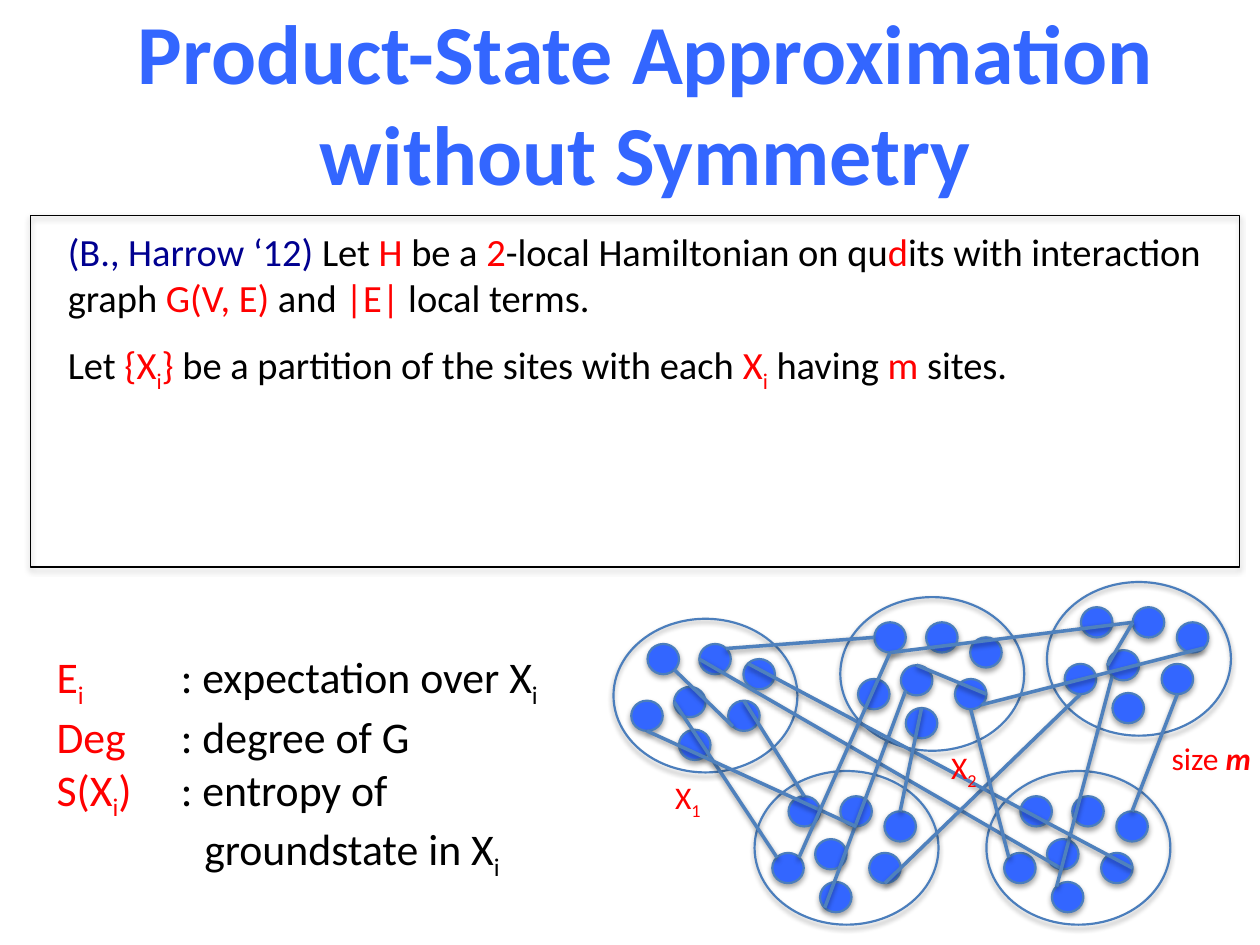
from lxml import etree
from pptx import Presentation
from pptx.dml.color import RGBColor
from pptx.enum.shapes import MSO_CONNECTOR, MSO_SHAPE
from pptx.enum.text import MSO_ANCHOR, MSO_AUTO_SIZE, PP_ALIGN
from pptx.oxml.ns import qn
from pptx.util import Pt

LINE = MSO_CONNECTOR.STRAIGHT
OVAL, RECT = MSO_SHAPE.OVAL, MSO_SHAPE.RECTANGLE
MIDDLE, CENTER = MSO_ANCHOR.MIDDLE, PP_ALIGN.CENTER
FIXED = MSO_AUTO_SIZE.NONE
FONT = "Calibri"
COLORS = {"blue": "3366FF", "navy": "000090", "black": "000000",
          "red": "FF0000", "rim": "4B7EBC", "link": "4F81BD"}

THEOREM = [
    [("(B., Harrow ‘12) ", "navy"), ("Let ", "black"), ("H", "red"),
     (" be a ", "black"), ("2", "red"), ("-local Hamiltonian on qu", "black"),
     ("d", "red"), ("its with interaction graph ", "black"),
     ("G(V, E) ", "red"), ("and ", "black"), ("|E|", "red"),
     (" local terms.", "black")],
    [("Let ", "black"), ("{X", "red"), ("i", "red", "sub"), ("} ", "red"),
     ("be a partition of the sites with each ", "black"), ("X", "red"),
     ("i", "red", "sub"), (" having ", "black"), ("m", "red"),
     (" sites.", "black")],
]
LEGEND = [
    [("E", "red"), ("i", "red", "sub"), ("\t: expectation over X", "black"),
     ("i", "black", "sub")],
    [("Deg", "red"), ("\t: degree of G", "black")],
    [("S(X", "red"), ("i", "red", "sub"), (")", "red"),
     ("\t: entropy of", "black")],
    [("groundstate in X", "black"), ("i", "black", "sub")],
]

GROUP_W, GROUP_H = 105.1, 87.8
DOT_W, DOT_H = 18, 17.3
GROUPS = [(0, 21), (129.6, 8.6), (80.6, 108), (247.7, 0), (213.1, 108)]
DOTS = [(19.4, 14.4), (49, 14.4), (37.4, 63.4), (34.6, 38.9),
        (10.1, 46.8), (74.2, 23), (65.5, 46.8)]
SITES = {"N": (0.5, 0), "S": (0.5, 1), "W": (0, 0.5), "E": (1, 0.5),
         "NW": (0.15, 0.15), "NE": (0.85, 0.15),
         "SW": (0.15, 0.85), "SE": (0.85, 0.85)}
LINKS = [
    ((0, 6, "N"), (2, 0, "N")), ((0, 1, "W"), (4, 3, "S")),
    ((3, 4, "S"), (2, 6, "S")), ((0, 3, "W"), (2, 4, "NW")),
    ((0, 0, "SE"), (0, 6, "SW")), ((1, 3, "SW"), (2, 2, "SW")),
    ((1, 0, "S"), (3, 1, "W")), ((3, 3, "SW"), (4, 2, "NW")),
    ((4, 6, "E"), (0, 5, "NW")), ((3, 6, "S"), (4, 5, "N")),
    ((2, 1, "S"), (0, 4, "S")), ((2, 5, "N"), (1, 2, "N")),
    ((1, 0, "S"), (2, 4, "NE")), ((3, 1, "W"), (3, 3, "W")),
    ((3, 5, "SE"), (1, 6, "SE")), ((1, 6, "S"), (4, 4, "NW")),
    ((1, 6, "E"), (1, 3, "N")), ((0, 1, "NE"), (1, 0, "W")),
]
LABELS = [
    ((28.1, 108.7, 33, 29), [("X", "red"), ("1", "red", "sub")]),
    ((185.8, 91.5, 33, 29), [("X", "red"), ("2", "red", "sub")]),
    ((311.8, 86.4, 113.8, 29), [("size ", "red"), ("m", "red", "strong")]),
]


def tint(name):
    return RGBColor.from_string(COLORS[name])


def shade(shape, alpha, dist):
    props = shape._element.spPr
    for old in props.findall(qn("a:effectLst")):
        props.remove(old)
    effect = etree.SubElement(props, qn("a:effectLst"))
    cast = etree.SubElement(effect, qn("a:outerShdw"), blurRad=str(Pt(3.1)),
                            dist=str(Pt(dist)), dir="5400000", rotWithShape="0")
    color = etree.SubElement(cast, qn("a:srgbClr"), val=COLORS["black"])
    etree.SubElement(color, qn("a:alpha"), val=str(alpha * 1000))


def add_form(slide, kind, box, line, width, fill=None):
    shape = slide.shapes.add_shape(kind, *map(Pt, box))
    if fill:
        shape.fill.solid()
        shape.fill.fore_color.rgb = tint(fill)
    else:
        shape.fill.background()
    shape.line.color.rgb = tint(line)
    shape.line.width = Pt(width)
    shade(shape, 35, 1.8)


def add_text(slide, box, rows, size, wrap=True):
    frame = slide.shapes.add_textbox(*map(Pt, box)).text_frame
    frame.word_wrap = wrap
    for i, row in enumerate(rows):
        para = frame.paragraphs[0] if i == 0 else frame.add_paragraph()
        for text, color, *style in row:
            run = para.add_run()
            run.text = text
            font = run.font
            font.name, font.size = FONT, Pt(size)
            font.color.rgb = tint(color)
            if "sub" in style:
                run._r.get_or_add_rPr().set("baseline", "-25000")
            if "strong" in style:
                font.bold = font.italic = True
    return frame.paragraphs


def add_title(slide, box):
    title = slide.shapes.title
    title.left, title.top, title.width, title.height = map(Pt, box)
    frame = title.text_frame
    frame.text = "Product-State Approximation without Symmetry"
    frame.word_wrap = True
    frame.auto_size = FIXED
    frame.vertical_anchor = MIDDLE
    para = frame.paragraphs[0]
    para.alignment = CENTER
    font = para.runs[0].font
    font.name, font.size, font.bold = FONT, Pt(48), True
    font.color.rgb = tint("blue")


def add_theorem(slide, box):
    x, y, w, h = box
    paras = add_text(slide, (x + 14.4, y + 3.6, w - 19.4, h - 48), THEOREM, 22)
    paras[1].space_before = Pt(12)
    add_form(slide, RECT, box, "black", 0.75)


def add_legend(slide, box):
    *terms, last = add_text(slide, box, LEGEND, 25)
    for para in terms:
        tabs = etree.SubElement(para._p.get_or_add_pPr(), qn("a:tabLst"))
        etree.SubElement(tabs, qn("a:tab"), pos=str(Pt(71)), algn="l")
    last._p.get_or_add_pPr().set("marL", str(Pt(84.5)))


def add_graph(slide, box):
    x, y = box[:2]

    def find(group, dot, site="NW"):
        (gx, gy), (dx, dy), (fx, fy) = GROUPS[group], DOTS[dot], SITES[site]
        return x + gx + dx + fx * DOT_W, y + gy + dy + fy * DOT_H

    for gx, gy in GROUPS:
        left, top = x + gx, y + gy
        add_form(slide, OVAL, (left, top, GROUP_W, GROUP_H), "rim", 1.25)
        for dx, dy in DOTS:
            spot = (left + dx, top + dy, DOT_W, DOT_H)
            add_form(slide, OVAL, spot, "rim", 1.25, "blue")
    for start, end in LINKS:
        ends = map(Pt, find(*start) + find(*end))
        link = slide.shapes.add_connector(LINE, *ends)
        link.line.color.rgb = tint("link")
        link.line.width = Pt(2)
        shade(link, 38, 1.6)
    for (lx, ly, w, h), row in LABELS:
        add_text(slide, (x + lx, y + ly, w, h), [row], 18, False)


def main():
    deck = Presentation()
    deck.slide_width, deck.slide_height = Pt(720), Pt(540)
    slide = deck.slides.add_slide(deck.slide_layouts[5])
    add_title(slide, (12.2, -10.8, 713.5, 137.5))
    add_theorem(slide, (17.3, 123.1, 691.2, 200.9))
    add_legend(slide, (25.2, 367.9, 313.2, 128.2))
    add_graph(slide, (350.6, 332.6, 352.8, 195.8))
    deck.save("out.pptx")


if __name__ == "__main__":
    main()
